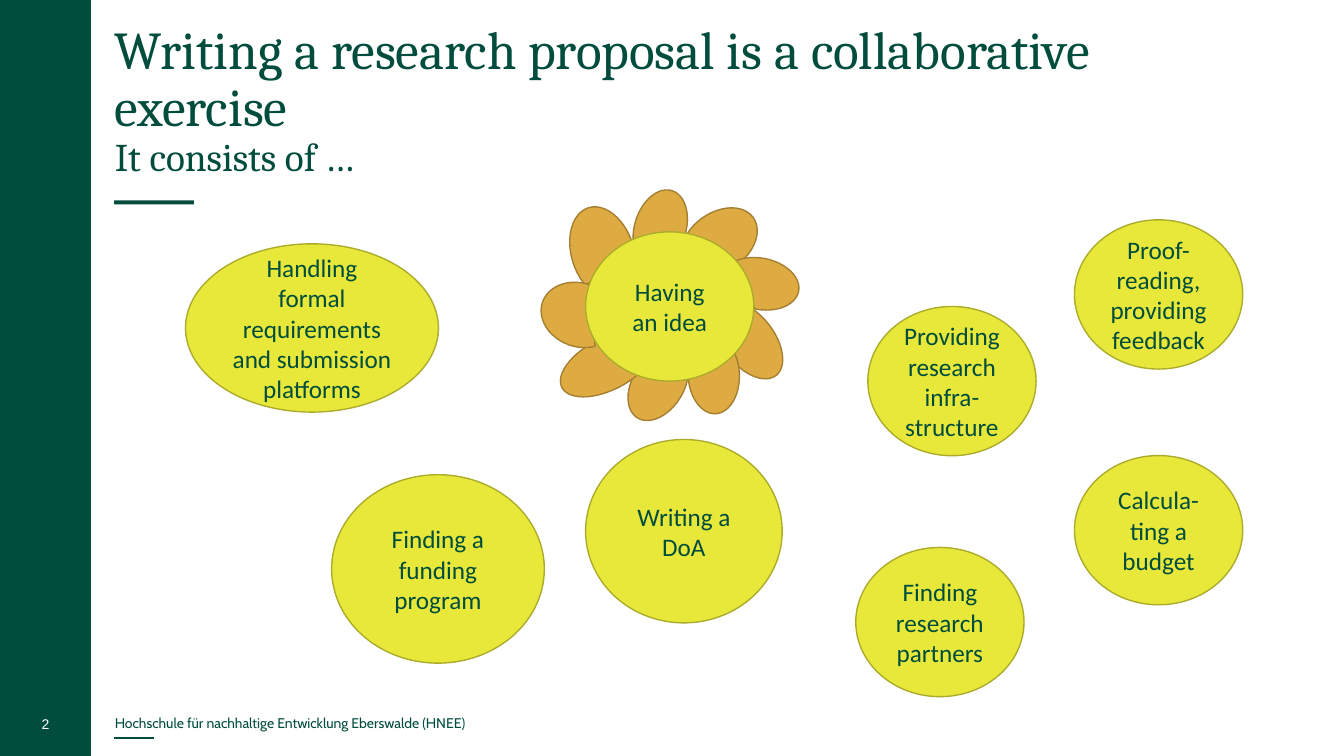
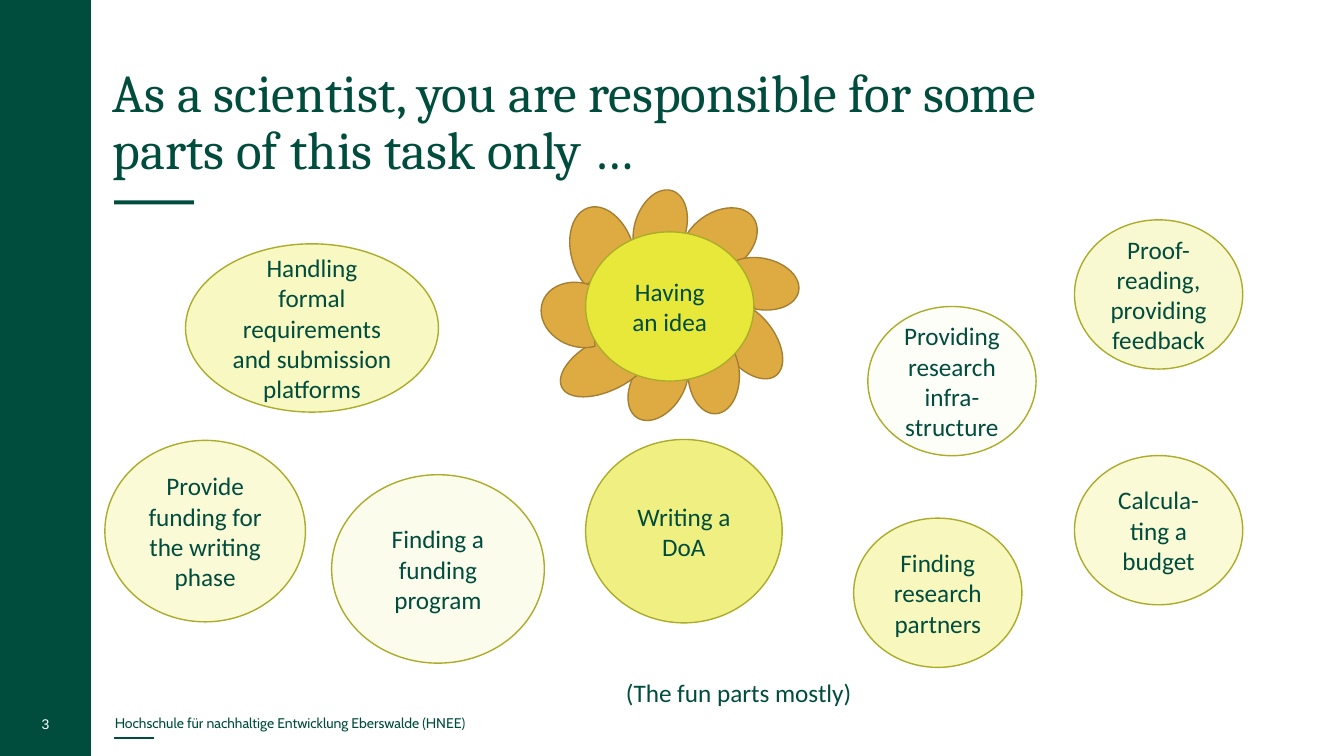
from collections import namedtuple

from pptx import Presentation
from pptx.dml.color import RGBColor
from pptx.enum.shapes import MSO_CONNECTOR, MSO_SHAPE
from pptx.enum.text import MSO_ANCHOR, MSO_AUTO_SIZE, PP_ALIGN
from pptx.oxml.ns import qn
from pptx.oxml.xmlchemy import OxmlElement
from pptx.util import Pt

Box = namedtuple("Box", "left top width height")

COLORS = {
    "green": "004D3D",
    "yellow": "E8E83A",
    "yellow_edge": "ACAC2B",
    "orange": "DEAB42",
    "orange_edge": "A47F31",
    "white": "FFFFFF",
}
PAGE = Box(0, 0, 960, 540)
BAND = Box(0, 0, 65, 540)
FOOTER = "Hochschule für nachhaltige Entwicklung Eberswalde (HNEE)"
FLOWER = Box(386, 144, 186, 158)
SMALL = (120.2, 106.6)

TASKS = {
    "Finding a funding program": Box(236.9, 339.1, 151.9, 134.6),
    "Finding research partners": Box(611.3, 391, *SMALL),
    "Providing research infra-structure": Box(619.9, 218.9, *SMALL),
    "Writing a DoA": Box(418.3, 313.9, 140.4, 131),
    "Calcula-ting a budget": Box(767.5, 325.4, *SMALL),
    "Proof-reading, providing feedback": Box(767.5, 157, *SMALL),
    "Handling formal requirements and submission platforms": Box(132.5, 174.2, 180.7, 120.2),
}
SCIENTIST_TASKS = TASKS | {
    "Finding research partners": Box(609.8, 370.1, *SMALL),
    "Provide funding for the writing phase": Box(74.9, 314.6, 143.3, 129.6),
}
SCIENTIST_SHARES = {
    "Finding a funding program": 9,
    "Finding research partners": 33,
    "Providing research infra-structure": 3,
    "Writing a DoA": 63,
    "Calcula-ting a budget": 20,
    "Proof-reading, providing feedback": 23,
    "Handling formal requirements and submission platforms": 30,
    "Provide funding for the writing phase": 20,
}
PETALS = [
    (Box(57.5, 0.7, 56.2, 36.7), 107.3),
    (Box(97.8, 7.9, 59.8, 41.8), 144.4),
    (Box(128.8, 40.3, 56.2, 36.7), 191),
    (Box(116.6, 80.6, 64.1, 36.7), 231.9),
    (Box(95.7, 105.1, 56.2, 36.7), 267.1),
    (Box(56.1, 112.3, 56.2, 36.7), 302.1),
    (Box(11.4, 97.9, 72.7, 36.7), 333),
    (Box(10.7, 14.4, 67.7, 44.6), 72.3),
    (Box(0, 58.3, 56.2, 45.4), 19.1),
]
ROUNDED_PETAL = 2


def color(name):
    return RGBColor.from_string(COLORS[name])


def points(box):
    return [Pt(length) for length in box]


def inside(outer, box):
    return box._replace(left=outer.left + box.left, top=outer.top + box.top)


def style(para, size, font, tint, align=PP_ALIGN.LEFT):
    para.alignment = align
    para.font.size = Pt(size)
    para.font.name = font
    para.font.color.rgb = color(tint)


def add_shape(page, kind, box, fill, edge=None):
    shape = page.shapes.add_shape(kind, *points(box))
    shape.shadow.inherit = False
    shape.fill.solid()
    shape.fill.fore_color.rgb = color(fill)
    if edge:
        shape.line.color.rgb = color(edge)
        shape.line.width = Pt(1)
    else:
        shape.line.fill.background()
    return shape


def add_label(page, box, text, size, font, tint, align=PP_ALIGN.LEFT):
    label = page.shapes.add_textbox(*points(box))
    label.text_frame.word_wrap = True
    para = label.text_frame.paragraphs[0]
    para.text = text
    style(para, size, font, tint, align)


def add_bubble(page, box, text, opacity=100):
    bubble = add_shape(page, MSO_SHAPE.OVAL, box, "yellow", "yellow_edge")
    if opacity < 100:
        alpha = OxmlElement("a:alpha")
        alpha.set("val", str(opacity * 1000))
        bubble.element.spPr.find(qn("a:solidFill"))[0].append(alpha)
    frame = bubble.text_frame
    frame.word_wrap = True
    frame.vertical_anchor = MSO_ANCHOR.MIDDLE
    frame.text = text
    style(frame.paragraphs[0], 18, "Calibri", "green", PP_ALIGN.CENTER)


def add_flower(page, box):
    for index, (petal_box, angle) in enumerate(PETALS):
        petal = add_shape(page, MSO_SHAPE.CHORD, inside(box, petal_box), "orange", "orange_edge")
        petal.rotation = angle
        if index == ROUNDED_PETAL:
            petal.adjustments[0] = 14.08
            petal.adjustments[1] = 162
    add_bubble(page, inside(box, Box(32.3, 21.6, *SMALL)), "Having an idea")


def add_frame(page, band, number):
    add_shape(page, MSO_SHAPE.RECTANGLE, band, "green")
    margin = band.left + band.width + 16.5
    add_shape(page, MSO_SHAPE.RECTANGLE, Box(margin, 143.2, 57, 2.9), "green")
    add_label(page, Box(margin - 6.6, 506.9, 430.6, 19.4), FOOTER, 10, "Cabin", "green")
    number_box = Box(band.left + 6.5, 507.6, band.width - 13, 18)
    add_label(page, number_box, str(number), 10, "Arial", "white", PP_ALIGN.CENTER)
    rule = page.shapes.add_connector(
        MSO_CONNECTOR.STRAIGHT, Pt(margin), Pt(527), Pt(margin + 28.8), Pt(527))
    rule.line.color.rgb = color("green")
    rule.line.width = Pt(1.5)
    rule.element.spPr.append(OxmlElement("a:effectLst"))


def set_title(page, box, text, subtitle=None):
    title = page.shapes.title
    title.left, title.top, title.width, title.height = points(box)
    frame = title.text_frame
    frame.margin_left = frame.margin_right = frame.margin_top = frame.margin_bottom = 0
    frame.word_wrap = True
    frame.auto_size = MSO_AUTO_SIZE.NONE
    frame.vertical_anchor = MSO_ANCHOR.BOTTOM
    para = frame.paragraphs[0]
    para.line_spacing = 0.9
    para.add_run().text = text
    style(para, 38, "Cambria", "green")
    if subtitle:
        para.add_line_break()
        span = para.add_run()
        span.text = subtitle
        span.font.size = Pt(28)


def add_task_page(deck, number, title_box, title, tasks, subtitle=None, shares=None):
    page = deck.slides.add_slide(deck.slide_layouts[5])
    add_frame(page, BAND, number)
    set_title(page, title_box, title, subtitle)
    for text, box in tasks.items():
        add_bubble(page, box, text, (shares or {}).get(text, 100))
    add_flower(page, FLOWER)
    return page


def main():
    deck = Presentation()
    deck.slide_width, deck.slide_height = Pt(PAGE.width), Pt(PAGE.height)
    add_task_page(
        deck, 2, Box(82, 81.4, 811.4, 47.5),
        "Writing a research proposal is a collaborative exercise",
        TASKS, subtitle="It consists of …")
    page = add_task_page(
        deck, 3, Box(80.6, 78.5, 747.4, 51.1),
        "As a scientist, you are responsible for some parts of this task only …",
        SCIENTIST_TASKS, shares=SCIENTIST_SHARES)
    add_label(page, Box(440, 480.2, 200.9, 28.8), "(The fun parts mostly)", 18, "Calibri", "green")
    deck.save("out.pptx")


if __name__ == "__main__":
    main()
